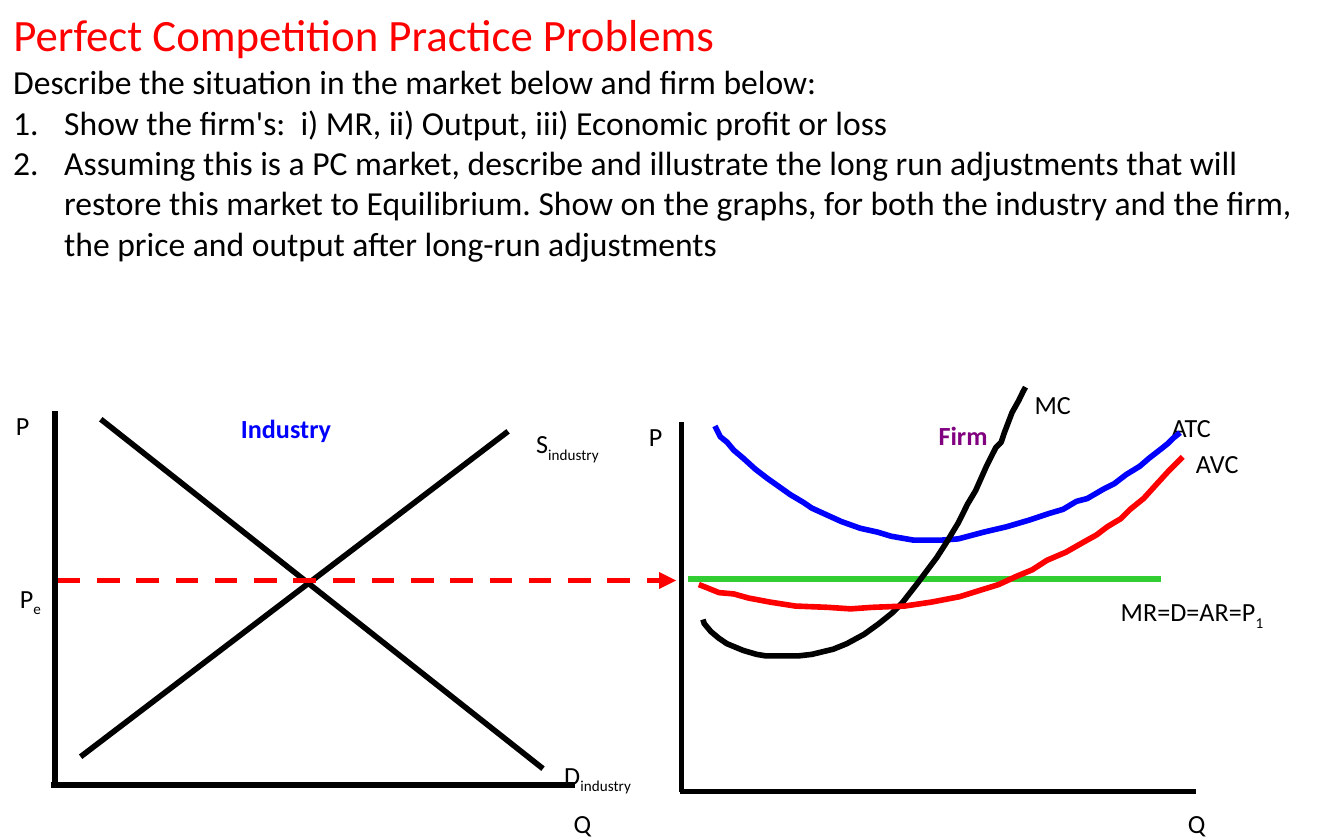
from lxml.etree import SubElement
from pptx import Presentation
from pptx.dml.color import RGBColor
from pptx.enum.dml import MSO_LINE_DASH_STYLE as Dash
from pptx.enum.shapes import MSO_CONNECTOR as Connector
from pptx.enum.text import MSO_ANCHOR as Anchor, MSO_AUTO_SIZE as AutoSize, PP_ALIGN as Align
from pptx.oxml.ns import qn
from pptx.util import Pt

BLACK, RED, BLUE, GREEN, PURPLE = "000000", "FF0000", "0000FF", "32CD32", "800080"


def color(hex_value):
    return RGBColor.from_string(hex_value)


def write(paragraph, text, size=14, ink=BLACK, bold=False, subscript=False, font="Calibri"):
    run = paragraph.add_run()
    run.text = text
    run.font.name = font
    run.font.size = Pt(size)
    run.font.bold = bold
    run.font.color.rgb = color(ink)
    if subscript:
        run._r.get_or_add_rPr().set("baseline", "-25000")


class Sheet:
    stroke = 3
    label_height = 24.5
    hanging = 27.36

    def __init__(self, slide):
        self.slide = slide
        self.shapes = slide.shapes

    def frame(self, shape):
        frame = shape.text_frame
        frame.word_wrap = True
        frame.auto_size = AutoSize.NONE
        frame.vertical_anchor = Anchor.TOP
        return frame

    def title(self, text, left, top, width, height):
        heading = self.shapes.title
        heading.left, heading.top = Pt(left), Pt(top)
        heading.width, heading.height = Pt(width), Pt(height)
        paragraph = self.frame(heading).paragraphs[0]
        paragraph.alignment = Align.LEFT
        write(paragraph, text, size=24, ink=RED)

    def box(self, left, top, width, height):
        return self.frame(self.shapes.add_textbox(Pt(left), Pt(top), Pt(width), Pt(height)))

    def task(self, intro, questions, left, top, width, height):
        frame = self.box(left, top, width, height)
        write(frame.paragraphs[0], intro, size=18)
        for question in questions:
            paragraph = frame.add_paragraph()
            write(paragraph, question, size=18)
            properties = paragraph._p.get_or_add_pPr()
            properties.set("marL", str(Pt(self.hanging)))
            properties.set("indent", str(-Pt(self.hanging)))
            SubElement(properties, qn("a:buFont"), typeface="+mj-lt")
            SubElement(properties, qn("a:buAutoNum"), type="arabicPeriod")

    def label(self, text, left, top, width, subscript="", **style):
        paragraph = self.box(left, top, width, self.label_height).paragraphs[0]
        write(paragraph, text, **style)
        if subscript:
            write(paragraph, subscript, subscript=True, **style)

    def line(self, x1, y1, x2, y2, ink=BLACK, dashed_arrow=False):
        segment = self.shapes.add_connector(Connector.STRAIGHT, Pt(x1), Pt(y1), Pt(x2), Pt(y2))
        segment.line.color.rgb = color(ink)
        segment.line.width = Pt(self.stroke)
        if dashed_arrow:
            segment.line.dash_style = Dash.DASH
            SubElement(segment.line._get_or_add_ln(), qn("a:tailEnd"), type="triangle")
        SubElement(segment._element.spPr, qn("a:effectLst"))

    def curve(self, points, ink):
        vertices = [(Pt(x), Pt(y)) for x, y in points]
        builder = self.shapes.build_freeform(*vertices[0], scale=1.0)
        builder.add_line_segments(vertices[1:], close=False)
        outline = builder.convert_to_shape()
        outline.shadow.inherit = False
        outline.fill.background()
        outline.line.color.rgb = color(ink)
        outline.line.width = Pt(self.stroke)


ATC = [
    (383, 228.2), (385.9, 234), (389.5, 236.9), (393.1, 241.2), (398.2, 245.5), (404.6, 251.3),
    (411.1, 256.3), (416.2, 259.9), (423.4, 265), (430.6, 269.3), (434.9, 272.2), (442.8, 275.8),
    (450.7, 279.4), (460.8, 283), (470.2, 285.1), (477.4, 287.3), (489.6, 289.4), (504, 289.4),
    (513.4, 288.7), (527, 285.1), (539.3, 282.2), (551.5, 278.6), (562.3, 275), (569.5, 272.9),
    (576.7, 268.6), (582.5, 267.1), (591.1, 262.1), (596.9, 259.2), (603.4, 254.2), (610.6, 249.8),
    (615.6, 245.5), (622.1, 240.5), (625.7, 237.6), (628.6, 234.7), (632.2, 231.8),
]
MC = [
    (376.6, 331.9), (377.3, 334.1), (380.9, 338.4), (385.2, 342), (389.5, 344.9), (398.2, 348.5),
    (405.4, 350.6), (410.4, 351.4), (427.7, 351.4), (434.9, 350.6), (446.4, 347.8), (453.6, 344.9),
    (463, 339.8), (470.9, 334.1), (478.1, 328.3), (483.1, 323.3), (491, 313.2), (501.8, 298.8),
    (506.9, 290.9), (513.4, 280.1), (518.4, 270), (522.7, 262.8), (528.5, 249.8), (533.5, 239.8),
    (536.4, 236.9), (537.8, 232.6), (542.2, 221), (545.8, 214.6), (547.9, 210.2), (549.4, 207.4),
]
AVC = [
    (374.4, 313.2), (378, 314.6), (385.2, 317.5), (393.1, 318.2), (401, 320.4), (412.6, 322.6),
    (426.2, 324.7), (443.5, 325.4), (455.8, 326.2), (467.3, 325.4), (484.6, 324.7), (499, 322.6),
    (514.1, 319.7), (525.6, 316.1), (535, 313.2), (544.3, 308.9), (553, 305.3), (560.9, 300.2),
    (571, 295.9), (581, 290.2), (587.5, 286.6), (593.3, 282.2), (600.5, 277.9), (605.5, 272.9),
    (612.7, 267.1), (619.2, 259.9), (626.4, 252), (633.6, 244.8),
]


def draw_industry(sheet):
    sheet.line(29.5, 220.3, 29.5, 420.5)
    sheet.line(27.4, 420.5, 308.2, 420.5)
    sheet.line(54, 224.6, 290.9, 411.8)
    sheet.line(43.2, 405.4, 272.2, 231.1)
    sheet.label("P", 1.4, 216, 31)
    sheet.label("Q", 300.2, 429.1, 34.6)
    sheet.label("S", 280.1, 225.4, 70.6, subscript="industry")
    sheet.label("D", 295.2, 403.2, 72, subscript="industry")
    sheet.label("Industry", 122, 217.4, 83.2, ink=BLUE, bold=True)
    sheet.label("P", 3.6, 308.2, 38.2, subscript="e")


def draw_firm(sheet):
    sheet.line(365, 424.1, 365, 226.1)
    sheet.line(364.3, 424.1, 640.8, 424.1)
    sheet.label("P", 340.6, 221.8, 31)
    sheet.label("Q", 629.3, 429.1, 34.6)
    sheet.label("Firm", 495.7, 221, 54.4, ink=PURPLE, bold=True)
    sheet.label("MC", 547.2, 204.5, 45.4)
    sheet.label("ATC", 620.6, 216.7, 50.4)
    sheet.label("AVC", 633.6, 236.2, 54)
    for points, ink in ((ATC, BLUE), (MC, BLACK), (AVC, RED)):
        sheet.curve(points, ink)
    sheet.label("MR=D=AR=P", 593.3, 315.4, 121, subscript="1")


def main():
    deck = Presentation()
    deck.slide_width, deck.slide_height = Pt(720), Pt(450)
    sheet = Sheet(deck.slides.add_slide(deck.slide_layouts[5]))
    sheet.title("Perfect Competition Practice Problems", 0, 0, 720, 36)
    sheet.task(
        "Describe the situation in the market below and firm below:",
        [
            "Show the firm's:  i) MR, ii) Output, iii) Economic profit or loss",
            "Assuming this is a PC market, describe and illustrate the long run adjustments that will "
            "restore this market to Equilibrium. Show on the graphs, for both the industry and the firm, "
            "the price and output after long-run adjustments",
        ],
        0, 29.3, 720, 117,
    )
    sheet.line(368.6, 310.3, 622.1, 310.3, ink=GREEN)
    draw_industry(sheet)
    draw_firm(sheet)
    sheet.line(31, 311, 362.2, 311, ink=RED, dashed_arrow=True)
    deck.save("out.pptx")


if __name__ == "__main__":
    main()
